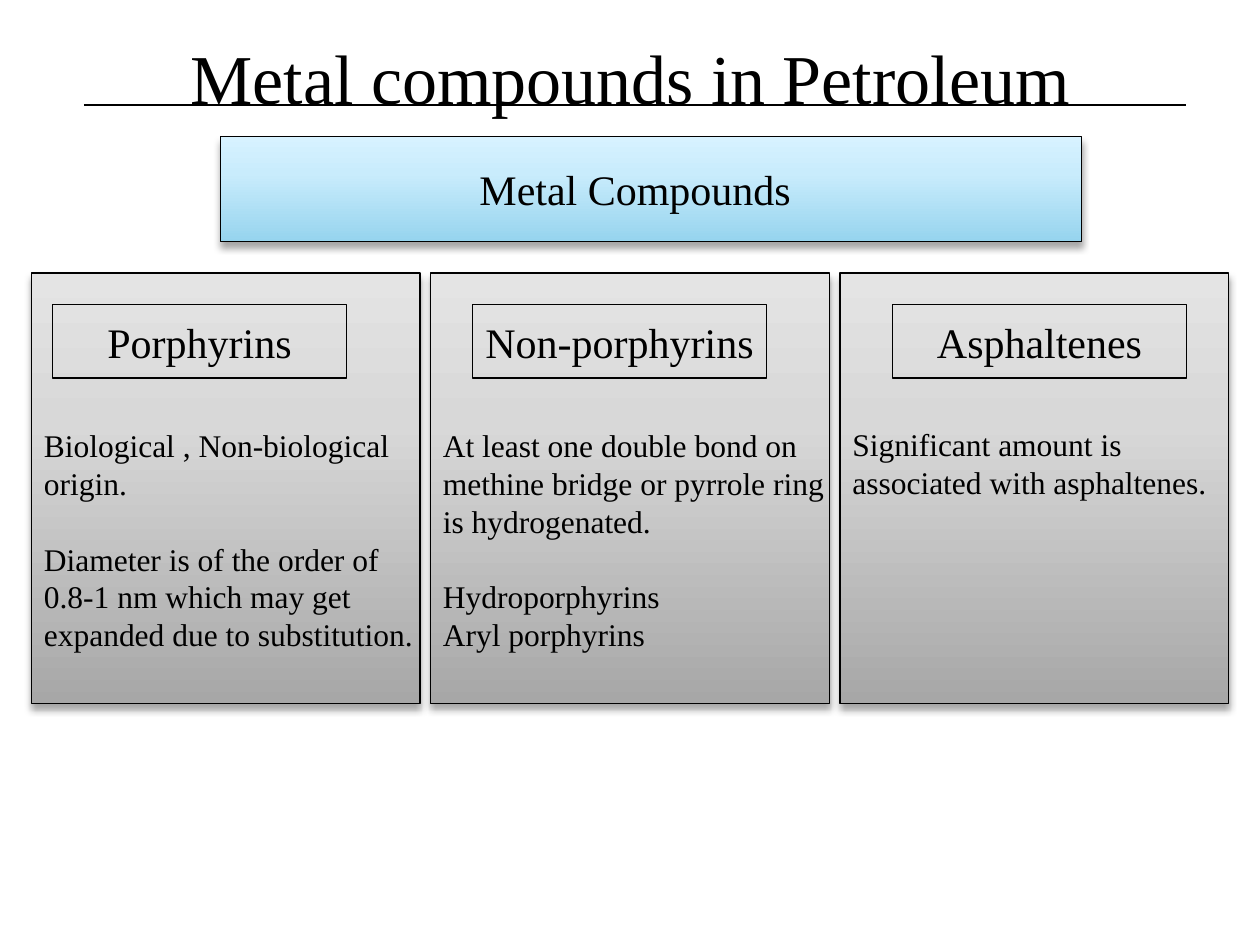
import copy

import lxml.etree
import pptx
import pptx.dml.color
import pptx.enum.shapes
import pptx.enum.text
import pptx.oxml
import pptx.oxml.ns
import pptx.util

Pt = pptx.util.Pt
RECTANGLE = pptx.enum.shapes.MSO_SHAPE.RECTANGLE
CENTER = pptx.enum.text.PP_ALIGN.CENTER
LEFT = pptx.enum.text.PP_ALIGN.LEFT
TOP = pptx.enum.text.MSO_ANCHOR.TOP
MIDDLE = pptx.enum.text.MSO_ANCHOR.MIDDLE
BLUE = [(0, "96D4EE"), (0.65, "C9ECFC"), (1, "D7F2FF")]
GRAY = [(0, "A7A7A7"), (0.65, "D8D8D8"), (1, "E4E4E4")]
SHADOW = (
    f'<a:outerShdw {pptx.oxml.ns.nsdecls("a")} blurRad="{Pt(4)}" dist="{Pt(3)}" '
    'dir="5400000" rotWithShape="0"><a:srgbClr val="000000">'
    '<a:alpha val="35000"/></a:srgbClr></a:outerShdw>'
)
BLANK_LINE = 21.6


def color(value):
    return pptx.dml.color.RGBColor.from_string(value)


def write(box, paragraphs, size, align, anchor):
    """Fill a box with (text, space before) paragraphs."""
    frame = box.text_frame
    settings = {"word_wrap": True, "vertical_anchor": anchor,
                "auto_size": pptx.enum.text.MSO_AUTO_SIZE.NONE}
    for name, value in settings.items():
        setattr(frame, name, value)
    for index, (text, space) in enumerate(paragraphs):
        para = frame.add_paragraph() if index else frame.paragraphs[0]
        para.alignment = align
        if space:
            para.space_before = Pt(space)
        span = para.add_run()
        span.text = text
        for name, value in {"name": "Times New Roman", "size": Pt(size)}.items():
            setattr(span.font, name, value)
        span.font.color.rgb = color("000000")


deck = pptx.Presentation()
deck.slide_width, deck.slide_height = Pt(720), Pt(540)
page = deck.slides.add_slide(deck.slide_layouts[5])

rule = page.shapes.add_connector(
    pptx.enum.shapes.MSO_CONNECTOR.STRAIGHT, Pt(48), Pt(60), Pt(678), Pt(60))
rule.line.color.rgb = color("000000")
rule.line.width = Pt(0.75)
lxml.etree.SubElement(rule._element.spPr, pptx.oxml.ns.qn("a:effectLst"))

# Shaded panels: left, top, width, height, gradient
panels = [
    (126, 78, 492, 60, BLUE),
    (480, 156, 222, 246, GRAY),
    (246, 156, 228, 246, GRAY),
    (18, 156, 222, 246, GRAY),
]
for left, top, width, height, gradient in panels:
    panel = page.shapes.add_shape(RECTANGLE, Pt(left), Pt(top), Pt(width), Pt(height))
    panel.fill.gradient()
    panel.fill.gradient_angle = 90
    properties = panel._element.spPr
    stop_list = properties.find(".//" + pptx.oxml.ns.qn("a:gsLst"))
    stop_list.append(copy.deepcopy(stop_list[0]))
    for stop, (position, value) in zip(panel.fill.gradient_stops, gradient):
        stop.position = position
        stop.color.rgb = color(value)
    panel.line.color.rgb = color("000000")
    panel.line.width = Pt(0.75)
    panel.shadow.inherit = False
    effects = properties.find(pptx.oxml.ns.qn("a:effectLst"))
    effects.append(pptx.oxml.parse_xml(SHADOW))

heading = page.shapes.add_textbox(Pt(204), Pt(84), Pt(318), Pt(48))
write(heading, [("Metal Compounds", 0)], 24, CENTER, MIDDLE)

# Columns: label left, label, text left, text top, text height, paragraphs
columns = [
    (30, "Porphyrins", 18, 240, 138, [
        ("Biological , Non-biological origin.", 0),
        ("Diameter is of the order of 0.8-1 nm which may get expanded "
         "due to substitution.", BLANK_LINE),
    ]),
    (270, "Non-porphyrins", 246, 240, 138, [
        ("At least one double bond on methine bridge or pyrrole ring "
         "is hydrogenated.", 0),
        ("Hydroporphyrins", BLANK_LINE),
        ("Aryl porphyrins", 0),
    ]),
    (510, "Asphaltenes", 480, 239.25, 51, [
        ("Significant amount is associated with asphaltenes.", 0),
    ]),
]
for label_left, name, text_left, text_top, text_height, paragraphs in columns:
    label = page.shapes.add_shape(RECTANGLE, Pt(label_left), Pt(174), Pt(168), Pt(42))
    label.shadow.inherit = False
    label.fill.background()
    label.line.color.rgb = color("000000")
    label.line.width = Pt(1)
    write(label, [(name, 0)], 24, CENTER, MIDDLE)
    details = page.shapes.add_textbox(
        Pt(text_left), Pt(text_top), Pt(234), Pt(text_height))
    write(details, paragraphs, 18, LEFT, TOP)

title = page.shapes.title
placement = {"left": 45.4, "top": 16.25, "width": 630, "height": 62}
for name, value in placement.items():
    setattr(title, name, Pt(value))
write(title, [("Metal compounds in Petroleum", 0)], 40, CENTER, TOP)

deck.save("out.pptx")
